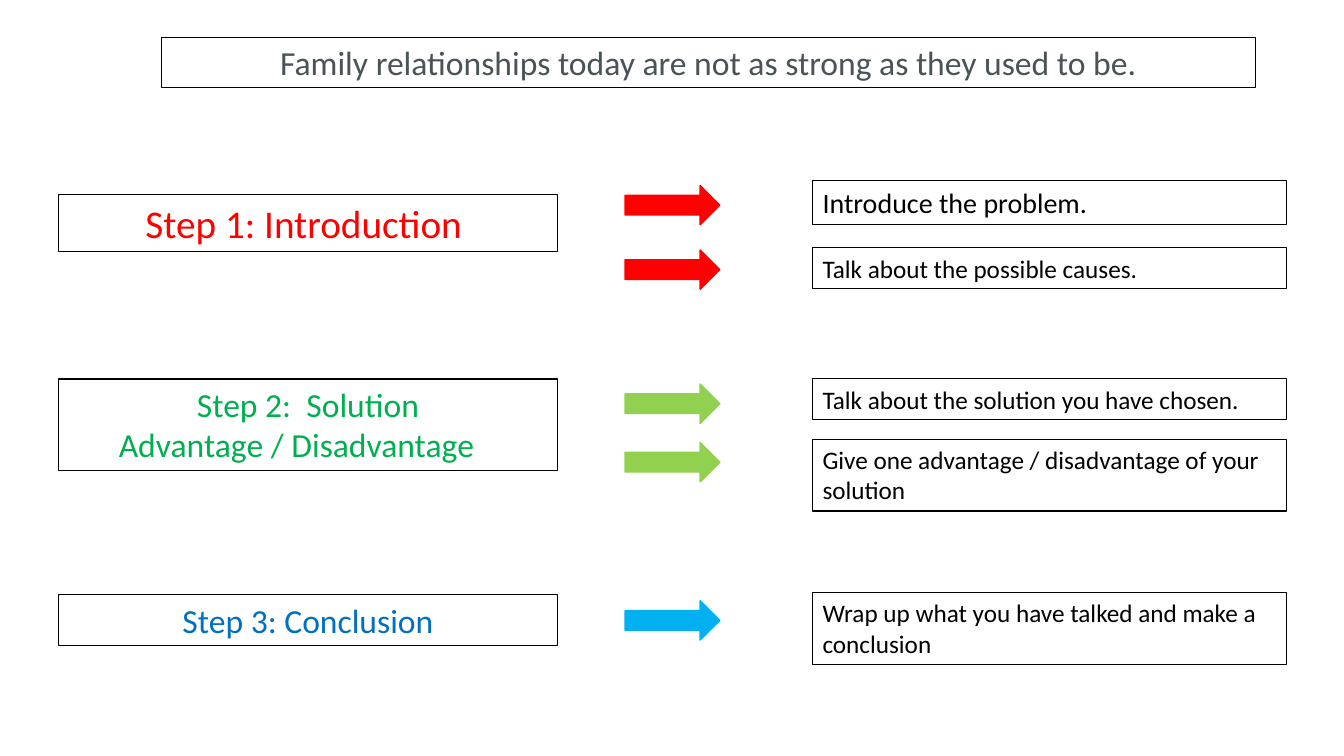
"""Build the three-step problem and solution essay slide."""
from dataclasses import dataclass

from pptx import Presentation
from pptx.dml.color import RGBColor as Rgb
from pptx.enum.shapes import MSO_SHAPE as Shape
from pptx.enum.text import MSO_ANCHOR as Anchor, MSO_AUTO_SIZE as Fit, PP_ALIGN as Align
from pptx.util import Inches, Pt


@dataclass(frozen=True)
class Theme:
    """Hold the font, colours and type sizes."""
    font: str = "Calibri"
    white: str = "FFFFFF"
    black: str = "000000"
    gray: str = "4A5356"
    red: str = "FF0000"
    green: str = "00B050"
    lime: str = "92D050"
    blue: str = "0070C0"
    sky: str = "00B0F0"
    big: int = 28
    head: int = 24
    lead: int = 20
    body: int = 18


def write(frame, text, *, font, size, color, aligns):
    """Write one paragraph per line of text, each with its alignment."""
    for i, (line, align) in enumerate(zip(text.split("\n"), aligns)):
        para = frame.paragraphs[0] if i == 0 else frame.add_paragraph()
        para.alignment = align
        run = para.add_run()
        run.text = line
        run.font.name = font
        run.font.size = Pt(size)
        run.font.color.rgb = Rgb.from_string(color)


class Board:
    """Draw styled elements on the current slide."""

    def __init__(self, slide, theme):
        """Keep the slide and its theme."""
        self.slide = slide
        self.theme = theme

    def shape(self, kind, left, top, width, height, fill, line, weight):
        """Add a flat shape with a fill and an outline."""
        item = self.slide.shapes.add_shape(
            kind, Inches(left), Inches(top), Inches(width), Inches(height))
        item.shadow.inherit = False
        item.fill.solid()
        item.fill.fore_color.rgb = Rgb.from_string(fill)
        item.line.color.rgb = Rgb.from_string(line)
        item.line.width = Pt(weight)
        return item

    def box(self, text, left, top, width, height, size, color, aligns):
        """Add an outlined box of text that grows to fit."""
        look = self.theme
        item = self.shape(Shape.RECTANGLE, left, top, width, height,
                          look.white, look.black, 0.75)
        frame = item.text_frame
        frame.word_wrap = True
        frame.auto_size = Fit.SHAPE_TO_FIT_TEXT
        frame.vertical_anchor = Anchor.TOP
        write(frame, text, font=look.font, size=size, color=color, aligns=aligns)

    def step(self, text, top, height, size, color):
        """Add a step box with a centred first line."""
        self.box(text, 0.58, top, 4.95, height, size, color,
                 (Align.CENTER, Align.LEFT))

    def task(self, text, top, height, size):
        """Add a task box on the right."""
        self.box(text, 8.06, top, 4.7, height, size, self.theme.black, (Align.LEFT,))

    def arrow(self, top, color):
        """Add an arrow from the step column to the task column."""
        self.shape(Shape.RIGHT_ARROW, 6.2, top, 0.94, 0.39, color, color, 1)


def main():
    """Build and save the slide."""
    deck = Presentation()
    deck.slide_width, deck.slide_height = Inches(13.33), Inches(7.5)
    look = Theme()
    board = Board(deck.slides.add_slide(deck.slide_layouts[6]), look)

    board.box("Family relationships today are not as strong as they used to be.",
              1.6, 0.37, 10.85, 0.5, look.head, look.gray, (Align.CENTER,))

    steps = (
        ("Step 1: Introduction ", 1.93, 0.57, look.big, look.red),
        ("Step 2:  Solution\n\tAdvantage / Disadvantage", 3.76, 0.91, look.head, look.green),
        ("Step 3: Conclusion", 5.9, 0.5, look.head, look.blue),
    )
    for step in steps:
        board.step(*step)

    tasks = (
        ("Introduce the problem.", 1.79, 0.44, look.lead),
        ("Talk about the possible causes.", 2.46, 0.4, look.body),
        ("Talk about the solution you have chosen.", 3.76, 0.4, look.body),
        ("Give one advantage / disadvantage of your solution", 4.36, 0.71, look.body),
        ("Wrap up what you have talked and make a conclusion", 5.88, 0.71, look.body),
    )
    for task in tasks:
        board.task(*task)

    arrows = ((1.84, look.red), (2.48, look.red), (3.81, look.lime),
              (4.39, look.lime), (5.96, look.sky))
    for top, color in arrows:
        board.arrow(top, color)

    deck.save("out.pptx")


if __name__ == "__main__":
    main()
